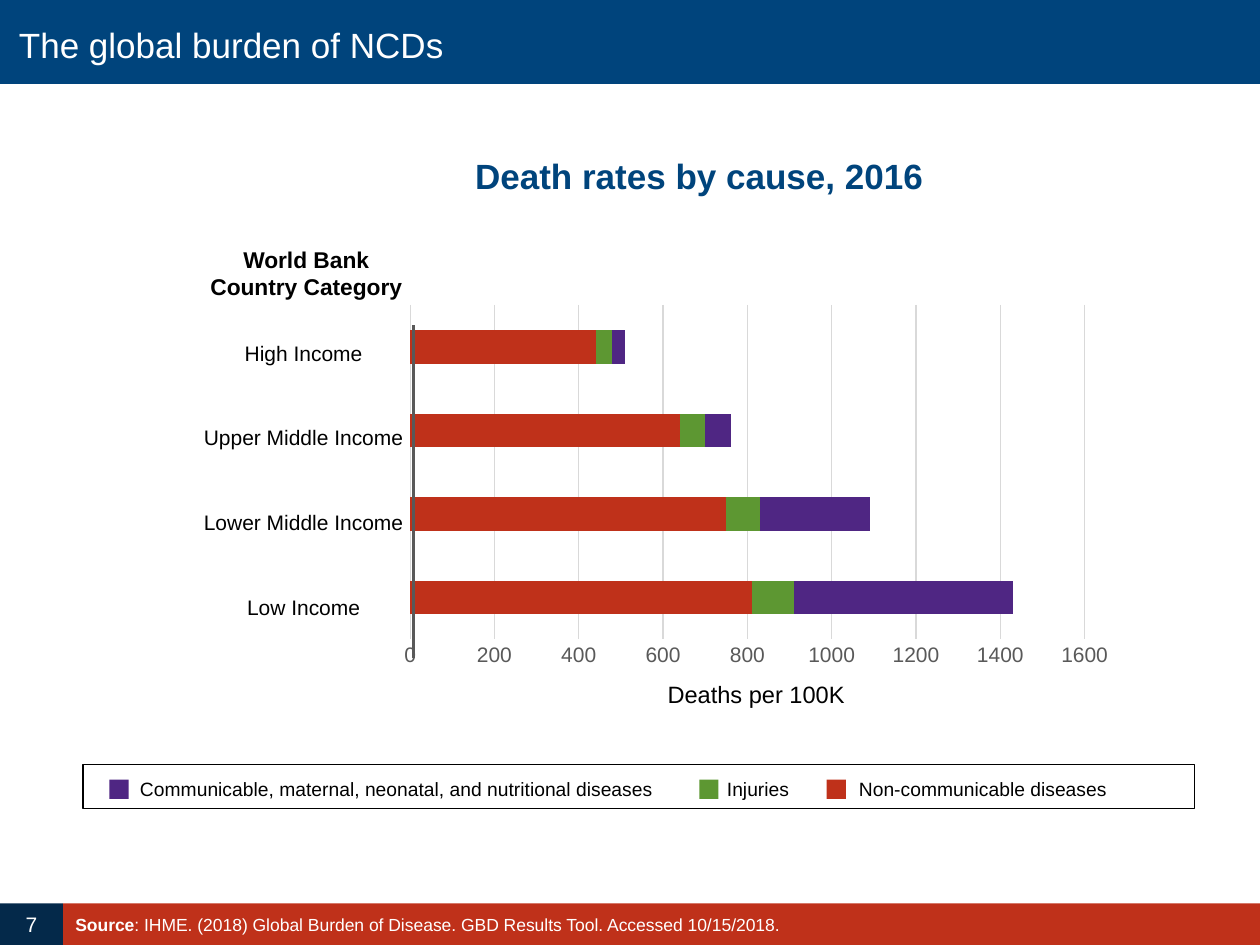
from lxml import etree
from pptx import Presentation
from pptx.chart.data import CategoryChartData
from pptx.dml.color import RGBColor
from pptx.enum.chart import XL_CHART_TYPE, XL_TICK_MARK
from pptx.enum.shapes import MSO_CONNECTOR, MSO_SHAPE
from pptx.enum.text import MSO_ANCHOR, PP_ALIGN
from pptx.oxml import parse_xml
from pptx.oxml.ns import nsdecls, qn
from pptx.util import Pt

LEFT, CENTER = PP_ALIGN.LEFT, PP_ALIGN.CENTER
MIDDLE = MSO_ANCHOR.MIDDLE
RECTANGLE = MSO_SHAPE.RECTANGLE
NO_TICKS = XL_TICK_MARK.NONE

FONT = "Arial"
COLORS = {
    "blue": "00447C", "navy": "04294A", "red": "BF311A", "green": "5D9732",
    "purple": "4F2683", "black": "000000", "white": "FFFFFF",
    "gray": "595959", "grid": "D9D9D9",
}


def write(shape, text, size, color, bold=False, align=LEFT):
    """Put text into a shape and format every run."""
    shape.text_frame.text = text
    for paragraph in shape.text_frame.paragraphs:
        paragraph.alignment = align
        for run in paragraph.runs:
            run.font.name = FONT
            run.font.size = Pt(size)
            run.font.bold = bold
            run.font.color.rgb = RGBColor.from_string(COLORS[color])


def add_rectangle(left, top, width, height, color):
    shape = slide.shapes.add_shape(RECTANGLE, Pt(left), Pt(top), Pt(width), Pt(height))
    shape.shadow.inherit = False
    shape.fill.solid()
    shape.fill.fore_color.rgb = RGBColor.from_string(COLORS[color])
    shape.line.fill.background()
    shape.text_frame.vertical_anchor = MIDDLE
    return shape


presentation = Presentation()
presentation.slide_width, presentation.slide_height = Pt(720), Pt(540)
slide = presentation.slides.add_slide(presentation.slide_layouts[5])

# Title bar
title = slide.shapes.title
title.left, title.top, title.width, title.height = Pt(0), Pt(0), Pt(720), Pt(48)
title.fill.solid()
title.fill.fore_color.rgb = RGBColor.from_string(COLORS["blue"])
write(title, "The global burden of NCDs", 20, "white")
title.text_frame.vertical_anchor = MIDDLE
title.text_frame.margin_left = title.text_frame.margin_right = Pt(10.8)
title.text_frame.margin_top, title.text_frame.margin_bottom = Pt(8), Pt(5)

# Stacked bars, from the bottom row to the top row
chart_data = CategoryChartData()
incomes = ["Low Income", "Lower Middle Income", "Upper Middle Income", "High Income"]
chart_data.categories = incomes
causes = [
    ("Non-communicable diseases", "red", (810, 750, 640, 440)),
    ("Injuries", "green", (100, 80, 60, 40)),
    ("Communicable, maternal, neonatal, and nutritional diseases", "purple",
     (520, 260, 60, 30)),
]
for name, color, rates in causes:
    chart_data.add_series(name, rates)
chart = slide.shapes.add_chart(
    XL_CHART_TYPE.BAR_STACKED, Pt(221.8), Pt(169.2), Pt(419), Pt(254.9), chart_data).chart
chart.has_legend = False
chart.has_title = False
chart.font.name, chart.font.size = FONT, Pt(10)
plot = chart.plots[0]
plot.gap_width, plot.overlap = 150, 100
plot.vary_by_categories = False
for series, (name, color, rates) in zip(plot.series, causes):
    series.format.fill.solid()
    series.format.fill.fore_color.rgb = RGBColor.from_string(COLORS[color])

chart.category_axis.visible = False
axis = chart.value_axis
axis.minimum_scale, axis.maximum_scale, axis.major_unit = 0, 1600, 200
axis.major_tick_mark = axis.minor_tick_mark = NO_TICKS
axis.format.line.fill.background()
axis.major_gridlines.format.line.color.rgb = RGBColor.from_string(COLORS["grid"])
axis.major_gridlines.format.line.width = Pt(0.75)
axis.tick_labels.font.name = FONT
axis.tick_labels.font.size = Pt(12)
axis.tick_labels.font.color.rgb = RGBColor.from_string(COLORS["gray"])
write(axis.axis_title, "Deaths per 100K", 13.5, "black", align=CENTER)

# Fixed plot area, so that the bars line up with the row labels
plot_area = chart.element.find(".//" + qn("c:plotArea"))
for old_layout in plot_area.findall(qn("c:layout")):
    plot_area.remove(old_layout)
layout = parse_xml(f"<c:layout {nsdecls('c')}><c:manualLayout/></c:layout>")
for tag, value in [("layoutTarget", "inner"), ("xMode", "edge"), ("yMode", "edge"),
                   ("x", "0.03"), ("y", "0.02"), ("w", "0.92"), ("h", "0.75")]:
    etree.SubElement(layout[0], qn("c:" + tag)).set("val", value)
plot_area.insert(0, layout)

# Baseline of the bars
baseline = slide.shapes.add_connector(
    MSO_CONNECTOR.STRAIGHT, Pt(236.2), Pt(185.8), Pt(236.2), Pt(375.8))
baseline.line.color.rgb = RGBColor.from_string(COLORS["gray"])
baseline.line.width = Pt(1.5)
etree.SubElement(baseline.element.spPr, qn("a:effectLst"))

# Legend frame and keys
frame = add_rectangle(47.5, 437, 635, 25.2, "white")
frame.fill.background()
frame.line.color.rgb = RGBColor.from_string(COLORS["black"])
frame.line.width = Pt(0.75)
for (name, color, rates), key_left, text_left in zip(
        causes, (472.4, 399.6, 62.6), (483.7, 408.3, 72.9)):
    add_rectangle(key_left, 445.5, 11, 11, color)

# Text boxes: left, top, width, height, text, size, color, bold, alignment
labels = [
    (226.8, 85, 345.6, 32, "Death rates by cause, 2016", 20, "blue", True, CENTER),
    (111.6, 136.8, 126.7, 39, "World Bank\nCountry Category", 13, "black", True, CENTER),
    (72.9, 440.6, 320, 21, causes[2][0], 11, "black", False, LEFT),
    (408.3, 440.6, 60, 21, causes[1][0], 11, "black", False, LEFT),
    (483.7, 440.6, 190, 21, causes[0][0], 11, "black", False, LEFT),
]
for row, income in enumerate(reversed(incomes)):
    labels.append((95, 190.8 + 48.5 * row, 157, 21.6, income, 12, "black", False, CENTER))
for left, top, width, height, text, size, color, bold, align in labels:
    box = slide.shapes.add_textbox(Pt(left), Pt(top), Pt(width), Pt(height))
    box.text_frame.word_wrap = True
    write(box, text, size, color, bold, align)

# Footer
source = add_rectangle(36, 516.2, 684, 23.8, "red")
write(source, "Source", 10, "white", bold=True)
citation = source.text_frame.paragraphs[0].add_run()
citation.text = ": IHME. (2018) Global Burden of Disease. GBD Results Tool. Accessed 10/15/2018."
citation.font.name, citation.font.size = FONT, Pt(10)
citation.font.color.rgb = RGBColor.from_string(COLORS["white"])
write(add_rectangle(0, 516.2, 36, 23.8, "navy"), "7", 12, "white", align=CENTER)

presentation.save("out.pptx")
